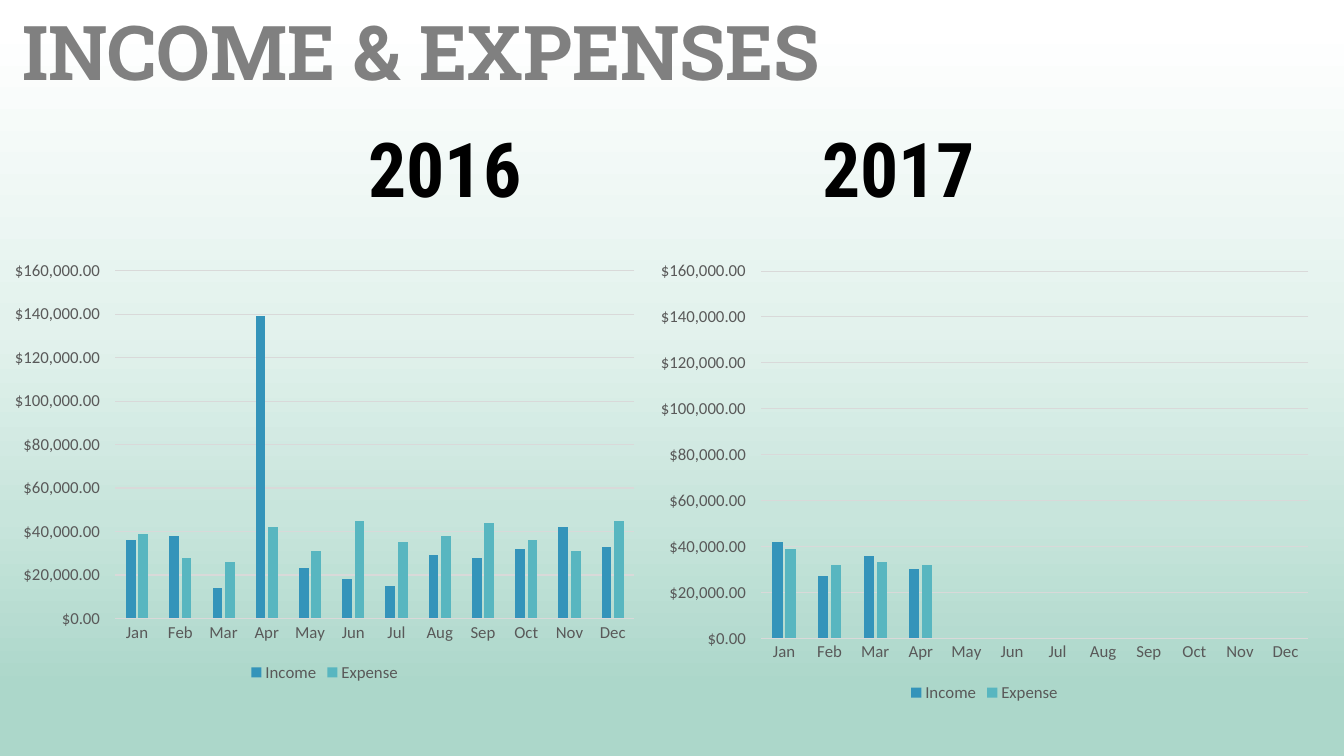
from lxml.etree import SubElement
from pptx import Presentation
from pptx.chart.data import CategoryChartData
from pptx.dml.color import RGBColor
from pptx.enum.chart import XL_CHART_TYPE, XL_LEGEND_POSITION, XL_TICK_MARK
from pptx.enum.text import MSO_ANCHOR, MSO_AUTO_SIZE, PP_ALIGN
from pptx.oxml.ns import qn
from pptx.util import Inches, Pt

TITLE = "INCOME & EXPENSES"
YEARS = "2016" + "\t" * 6 + "2017"
MONTHS = ["Jan", "Feb", "Mar", "Apr", "May", "Jun",
          "Jul", "Aug", "Sep", "Oct", "Nov", "Dec"]
NO_DATA = [None] * 8
CHARTS = [
    {"box": (0.02, 2.5, 6.4, 4.31),
     "Income": [36000, 38000, 14000, 139000, 23000, 18000,
                15000, 29000, 28000, 32000, 42000, 33000],
     "Expense": [39000, 28000, 26000, 42000, 31000, 45000,
                 35000, 38000, 44000, 36000, 31000, 45000]},
    {"box": (6.42, 2.5, 6.69, 4.51),
     "Income": [42000, 27000, 36000, 30000] + NO_DATA,
     "Expense": [39000, 32000, 33000, 32000] + NO_DATA},
]
DOLLARS = '"$"* #,##0.00\\ _€'
AXIS_TOP = 160000

BACKGROUND_STOPS = [(3, "FFFFFF"), (43, "E3F2ED"), (68, "C8E5DC"), (91, "ACD7CA")]
TITLE_GRAY = RGBColor(0x80, 0x80, 0x80)
BLACK = RGBColor(0, 0, 0)
LABEL_GRAY = RGBColor(0x59, 0x59, 0x59)
GRID_GRAY = RGBColor(0xD9, 0xD9, 0xD9)
SERIES_COLORS = {"Income": RGBColor(0x34, 0x94, 0xBA),
                 "Expense": RGBColor(0x58, 0xB6, 0xC0)}


def set_font(font, name, size, color, bold=False):
    font.name = name
    font.size = Pt(size)
    font.bold = bold
    font.color.rgb = color


def paint_background(page):
    fill = page.background.fill
    fill.gradient()
    fill.gradient_angle = 270
    stops = next(page.element.iter(qn("a:gsLst")))
    for stop in list(stops):
        stops.remove(stop)
    for percent, color in BACKGROUND_STOPS:
        stop = SubElement(stops, qn("a:gs"), pos=str(percent * 1000))
        SubElement(stop, qn("a:srgbClr"), val=color)


def write_heading(box, text, place, font_name, color, alignment):
    box.left, box.top, box.width, box.height = map(Inches, place)
    frame = box.text_frame
    frame.text = text
    frame.word_wrap = True
    frame.auto_size = MSO_AUTO_SIZE.SHAPE_TO_FIT_TEXT
    frame.vertical_anchor = MSO_ANCHOR.TOP
    para = frame.paragraphs[0]
    para.alignment = alignment
    set_font(para.font, font_name, 54, color, bold=True)


def draw_line(line):
    line.color.rgb = GRID_GRAY
    line.width = Pt(0.75)


def add_column_chart(page, content):
    data = CategoryChartData(number_format=DOLLARS)
    data.categories = MONTHS
    for name in SERIES_COLORS:
        data.add_series(name, content[name])
    chart = page.shapes.add_chart(XL_CHART_TYPE.COLUMN_CLUSTERED,
                                  *map(Inches, content["box"]), data).chart
    set_font(chart.font, "Calibri", 10, BLACK)
    chart.has_title = False
    chart.has_legend = True
    chart.legend.position = XL_LEGEND_POSITION.BOTTOM
    chart.legend.include_in_layout = False
    set_font(chart.legend.font, "Calibri", 12, LABEL_GRAY)

    plot = chart.plots[0]
    plot.gap_width = 219
    plot.overlap = -27
    plot.vary_by_categories = False
    for series in plot.series:
        series.format.fill.solid()
        series.format.fill.fore_color.rgb = SERIES_COLORS[series.name]

    months, amounts = chart.category_axis, chart.value_axis
    for axis in (months, amounts):
        axis.major_tick_mark = axis.minor_tick_mark = XL_TICK_MARK.NONE
        set_font(axis.tick_labels.font, "Calibri", 12, LABEL_GRAY)
    draw_line(months.format.line)
    amounts.format.line.fill.background()
    amounts.has_major_gridlines = True
    draw_line(amounts.major_gridlines.format.line)
    amounts.minimum_scale = 0
    amounts.maximum_scale = AXIS_TOP
    amounts.tick_labels.number_format = DOLLARS
    amounts.tick_labels.number_format_is_linked = False


def main():
    deck = Presentation()
    deck.slide_width, deck.slide_height = Inches(13.33), Inches(7.5)
    page = deck.slides.add_slide(deck.slide_layouts[5])
    paint_background(page)
    write_heading(page.shapes.title, TITLE, (0.12, 0, 8.32, 1.01),
                  "Roboto Slab", TITLE_GRAY, PP_ALIGN.LEFT)
    years = page.shapes.add_textbox(0, 0, 0, 0)
    write_heading(years, YEARS, (0, 1.16, 13.33, 1.01),
                  "Roboto Condensed", BLACK, PP_ALIGN.CENTER)
    for content in CHARTS:
        add_column_chart(page, content)
    deck.save("out.pptx")


if __name__ == "__main__":
    main()
